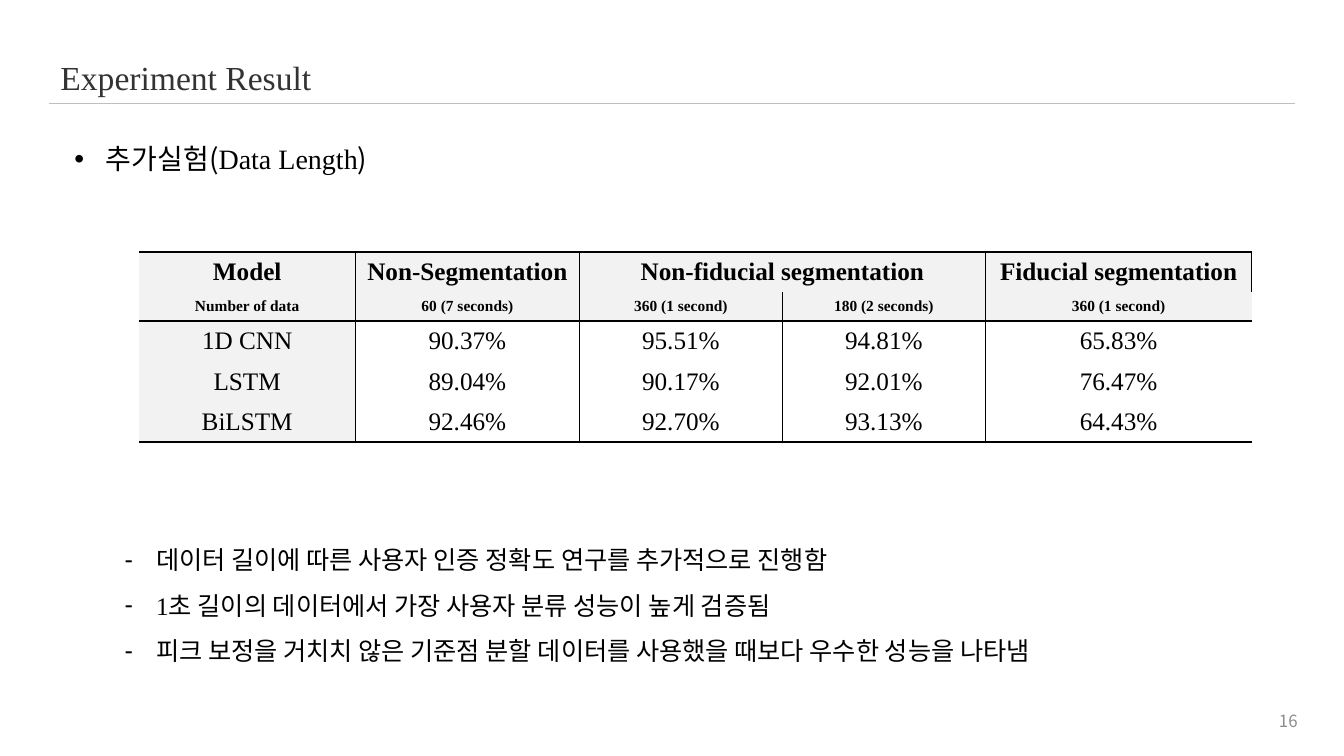
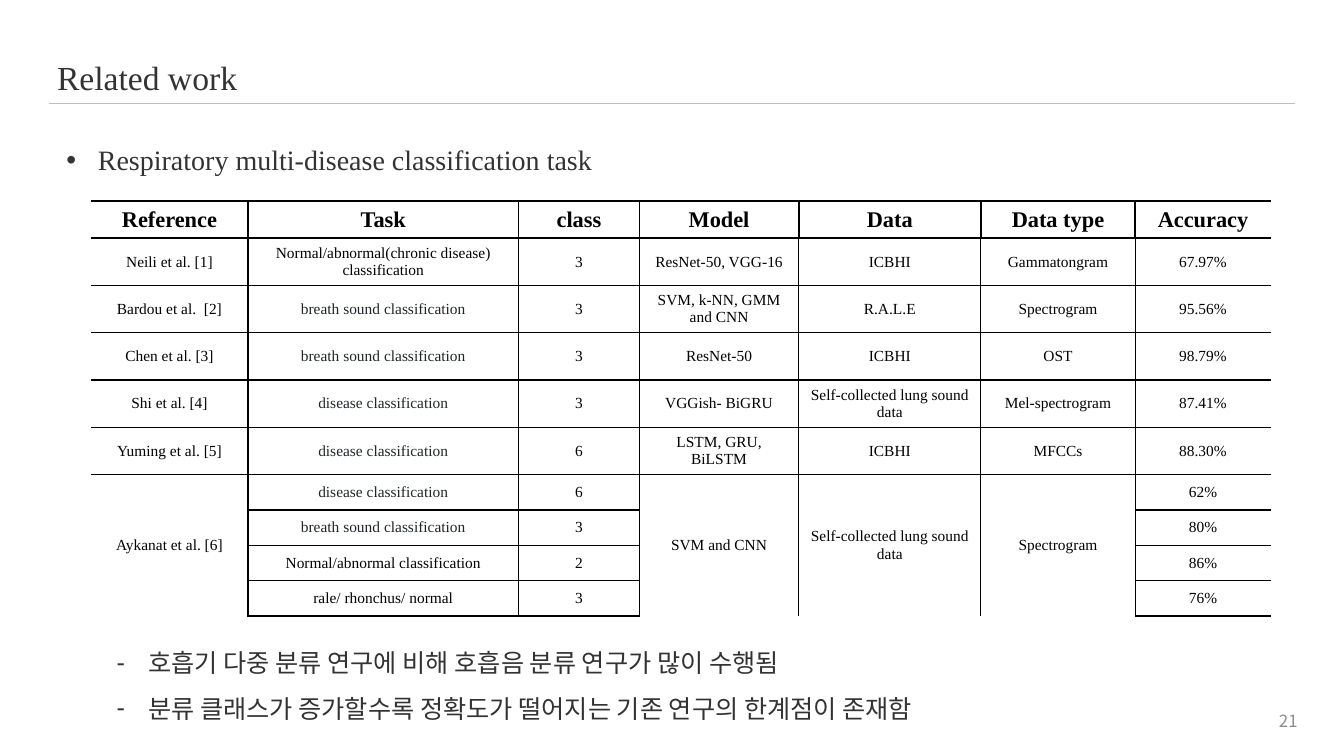
from dataclasses import dataclass
from typing import Callable, Optional

from lxml import etree
from pptx import Presentation
from pptx import util as u
from pptx.dml.color import RGBColor
from pptx.enum import shapes, text
from pptx.oxml import ns

Pt = u.Pt
BLACK = RGBColor(0, 0, 0)
INK = RGBColor(0x33, 0x33, 0x33)
DARK = RGBColor(0x21, 0x25, 0x29)
GREY = RGBColor(0x8C, 0x8C, 0x8C)
RULE = RGBColor(0xBF, 0xBF, 0xBF)
PALE = RGBColor(0xF2, 0xF2, 0xF2)
SERIF = "Times New Roman"
SANS = "Noto Sans CJK KR"
MID = text.MSO_ANCHOR.MIDDLE
ALIGN = text.PP_ALIGN

Row = list[Optional[str]]


@dataclass(frozen=True)
class Look:
    size: float
    bold: bool = False
    color: RGBColor = BLACK
    fill: Optional[RGBColor] = None


@dataclass(frozen=True)
class Grid:
    left: float
    top: float
    cols: list[float]
    rows: list[float]
    cells: list[Row]
    spans: list[tuple[int, int, int, int]]  # first row, first column, last row, last column
    look: Callable[[int, int, str], Look]
    level: Callable[[int], float]  # width of the line above a row
    upright: Callable[[int, int], float]  # width of the line left of a column


@dataclass(frozen=True)
class Page:
    title: str
    left: float
    width: float
    number: int
    body: tuple[float, float, float]  # left, top, height
    color: RGBColor
    head: list[tuple[str, str]]
    gap: float
    notes: list[str]
    grid: Grid


def style(run, size: float, color: RGBColor, name: str = SERIF, bold: bool = False) -> None:
    font = run.font
    font.size, font.name, font.bold = Pt(size), name, bold
    font.color.rgb = color
    east = etree.SubElement(run._r.get_or_add_rPr(), ns.qn("a:ea"))
    east.set("typeface", SANS)


def bullet(para, mark: str, indent: float) -> None:
    props = para._p.get_or_add_pPr()
    props.set("marL", str(Pt(indent)))
    props.set("indent", str(-Pt(22.5)))
    etree.SubElement(props, ns.qn("a:buFont")).set("typeface", "Arial")
    etree.SubElement(props, ns.qn("a:buChar")).set("char", mark)


def edge(cell, side: str, width: float) -> None:
    """Draw one cell border, or clear it when the width is zero."""
    line = etree.SubElement(cell._tc.get_or_add_tcPr(), ns.qn("a:ln" + side))
    if not width:
        etree.SubElement(line, ns.qn("a:noFill"))
        return
    line.set("w", str(Pt(width)))
    fill = etree.SubElement(line, ns.qn("a:solidFill"))
    etree.SubElement(fill, ns.qn("a:srgbClr")).set("val", str(BLACK))


def block(grid: Grid, row: int, col: int) -> tuple[int, int, int, int]:
    """Return the merged area that holds a cell."""
    for span in grid.spans:
        if span[0] <= row <= span[2] and span[1] <= col <= span[3]:
            return span
    return row, col, row, col


def add_grid(slide, grid: Grid) -> None:
    frame = slide.shapes.add_table(
        len(grid.rows), len(grid.cols), Pt(grid.left), Pt(grid.top),
        Pt(sum(grid.cols)), Pt(sum(grid.rows)))
    table = frame.table
    table.first_row = table.horz_banding = False
    for col, width in zip(table.columns, grid.cols):
        col.width = Pt(width)
    for row, height in zip(table.rows, grid.rows):
        row.height = Pt(height)
    for top, left, low, right in grid.spans:
        table.cell(top, left).merge(table.cell(low, right))
    for r, row in enumerate(grid.cells):
        for c, words in enumerate(row):
            cell = table.cell(r, c)
            top, left, low, right = block(grid, r, c)
            edge(cell, "L", grid.upright(r, c) if c == left else 0)
            edge(cell, "R", grid.upright(r, c + 1) if c == right else 0)
            edge(cell, "T", grid.level(r) if r == top else 0)
            edge(cell, "B", grid.level(r + 1) if r == low else 0)
            look = grid.look(r, c, words or "")
            if look.fill is None:
                cell.fill.background()
            else:
                cell.fill.solid()
                cell.fill.fore_color.rgb = look.fill
            if words is None:
                continue
            cell.vertical_anchor = MID
            cell.text_frame.text = words
            para = cell.text_frame.paragraphs[0]
            para.alignment = ALIGN.CENTER
            style(para.runs[0], look.size, look.color, bold=look.bold)


def add_title(slide, page: Page) -> None:
    title = slide.shapes.title
    title.left, title.top = Pt(page.left), Pt(36.7)
    title.width, title.height = Pt(page.width), Pt(36)
    frame = title.text_frame
    frame.text = page.title
    frame.word_wrap = False
    frame.auto_size = text.MSO_AUTO_SIZE.NONE
    frame.vertical_anchor = text.MSO_ANCHOR.TOP
    para = frame.paragraphs[0]
    para.alignment = ALIGN.CENTER
    style(para.runs[0], 24, INK)
    line = slide.shapes.add_connector(
        shapes.MSO_CONNECTOR.STRAIGHT, Pt(35.3), Pt(73.6), Pt(925), Pt(73.6))
    line.line.color.rgb = RULE
    line.line.width = Pt(0.5)
    etree.SubElement(line._element.spPr, ns.qn("a:effectLst"))


def add_number(slide, number: int) -> None:
    box = slide.shapes.add_textbox(Pt(718), Pt(500.5), Pt(216), Pt(28.8))
    frame = box.text_frame
    frame.word_wrap = True
    frame.vertical_anchor = MID
    frame.text = str(number)
    para = frame.paragraphs[0]
    para.alignment = ALIGN.RIGHT
    style(para.runs[0], 12, GREY, SANS)


def add_body(slide, page: Page) -> None:
    """Write the heading above the table and the notes below it."""
    left, top, height = page.body
    box = slide.shapes.add_textbox(Pt(left), Pt(top), Pt(878.4), Pt(height))
    frame = box.text_frame
    frame.word_wrap = True
    para = frame.paragraphs[0]
    para.line_spacing = Pt(36)
    bullet(para, "•", 22.5)
    for words, name in page.head:
        run = para.add_run()
        run.text = words
        style(run, 20, page.color, name)
    for i, note in enumerate(page.notes):
        para = frame.add_paragraph()
        para.text = note
        para.level = 1
        para.line_spacing = Pt(32.6)
        para.space_before = Pt(0 if i else page.gap)
        bullet(para, "-", 58.5)
        style(para.runs[0], 18, page.color)


def score_look(row: int, col: int, words: str) -> Look:
    fill = PALE if row < 2 or col == 0 else None
    return Look(11 if row == 1 else 18, row < 2, fill=fill)


def study_look(row: int, col: int, words: str) -> Look:
    if row == 0:
        return Look(16, True)
    plain = words.islower() and words.endswith("classification")
    return Look(11, color=DARK if plain else BLACK)


SCORES = Grid(
    99.3, 180, [154.6, 160, 145, 145, 190.4], [28.8, 20.2] + [28.8] * 3,
    [
        ["Model", "Non-Segmentation", "Non-fiducial segmentation", None, "Fiducial segmentation"],
        ["Number of data", "60 (7 seconds)", "360 (1 second)", "180 (2 seconds)", "360 (1 second)"],
        ["1D CNN", "90.37%", "95.51%", "94.81%", "65.83%"],
        ["LSTM", "89.04%", "90.17%", "92.01%", "76.47%"],
        ["BiLSTM", "92.46%", "92.70%", "93.13%", "64.43%"],
    ],
    [(0, 2, 0, 3)],
    score_look,
    lambda row: {0: 1.5, 2: 1, 5: 1.5}.get(row, 0),
    lambda row, col: 1 if 0 < col < 5 or (row, col) == (0, 5) else 0,
)

STUDIES = Grid(
    65, 143.7, [112.2, 193.2, 86.4, 113.8, 130.1, 110.2, 97], [26] + [33.8] * 5 + [25.2] * 4,
    [
        ["Reference", "Task", "class", "Model", "Data", "Data type", "Accuracy"],
        ["Neili et al. [1]", "Normal/abnormal(chronic disease) classification", "3",
         "ResNet-50, VGG-16", "ICBHI", "Gammatongram", "67.97%"],
        ["Bardou et al.  [2]", "breath sound classification", "3",
         "SVM, k-NN, GMM and CNN", "R.A.L.E", "Spectrogram", "95.56%"],
        ["Chen et al. [3]", "breath sound classification", "3",
         "ResNet-50", "ICBHI", "OST", "98.79%"],
        ["Shi et al. [4]", "disease classification", "3",
         "VGGish- BiGRU", "Self-collected lung sound data", "Mel-spectrogram", "87.41%"],
        ["Yuming et al. [5]", "disease classification", "6",
         "LSTM, GRU, BiLSTM", "ICBHI", "MFCCs", "88.30%"],
        ["Aykanat et al. [6]", "disease classification", "6",
         "SVM and CNN", "Self-collected lung sound data", "Spectrogram", "62%"],
        [None, "breath sound classification", "3", None, None, None, "80%"],
        [None, "Normal/abnormal classification", "2", None, None, None, "86%"],
        [None, "rale/ rhonchus/ normal", "3", None, None, None, "76%"],
    ],
    [(6, col, 9, col) for col in (0, 3, 4, 5)],
    study_look,
    lambda row: 1.5 if row in (0, 1, 10) else 1,
    lambda row, col: 0 if col in (0, 7) else 1 if row else 1.5,
)

PAGES = [
    Page("Experiment Result", 35.3, 195, 16, (46, 85.7, 391.7), BLACK,
         [("추가실험(", SANS), ("Data Length", SERIF), (")", SANS)], 252.5,
         ["데이터 길이에 따른 사용자 인증 정확도 연구를 추가적으로 진행함",
          "1초 길이의 데이터에서 가장 사용자 분류 성능이 높게 검증됨",
          "피크 보정을 거치치 않은 기준점 분할 데이터를 사용했을 때보다 우수한 성능을 나타냄"],
         SCORES),
    Page("Related work", 33.1, 144, 21, (40.3, 86.4, 432), INK,
         [("Respiratory multi-disease classification task", SERIF)], 325.5,
         ["호흡기 다중 분류 연구에 비해 호흡음 분류 연구가 많이 수행됨",
          "분류 클래스가 증가할수록 정확도가 떨어지는 기존 연구의 한계점이 존재함"],
         STUDIES),
]


def main() -> None:
    deck = Presentation()
    deck.slide_width, deck.slide_height = Pt(960), Pt(540)
    for page in PAGES:
        slide = deck.slides.add_slide(deck.slide_layouts[5])
        add_title(slide, page)
        add_number(slide, page.number)
        add_body(slide, page)
        add_grid(slide, page.grid)
    deck.save("out.pptx")


if __name__ == "__main__":
    main()
